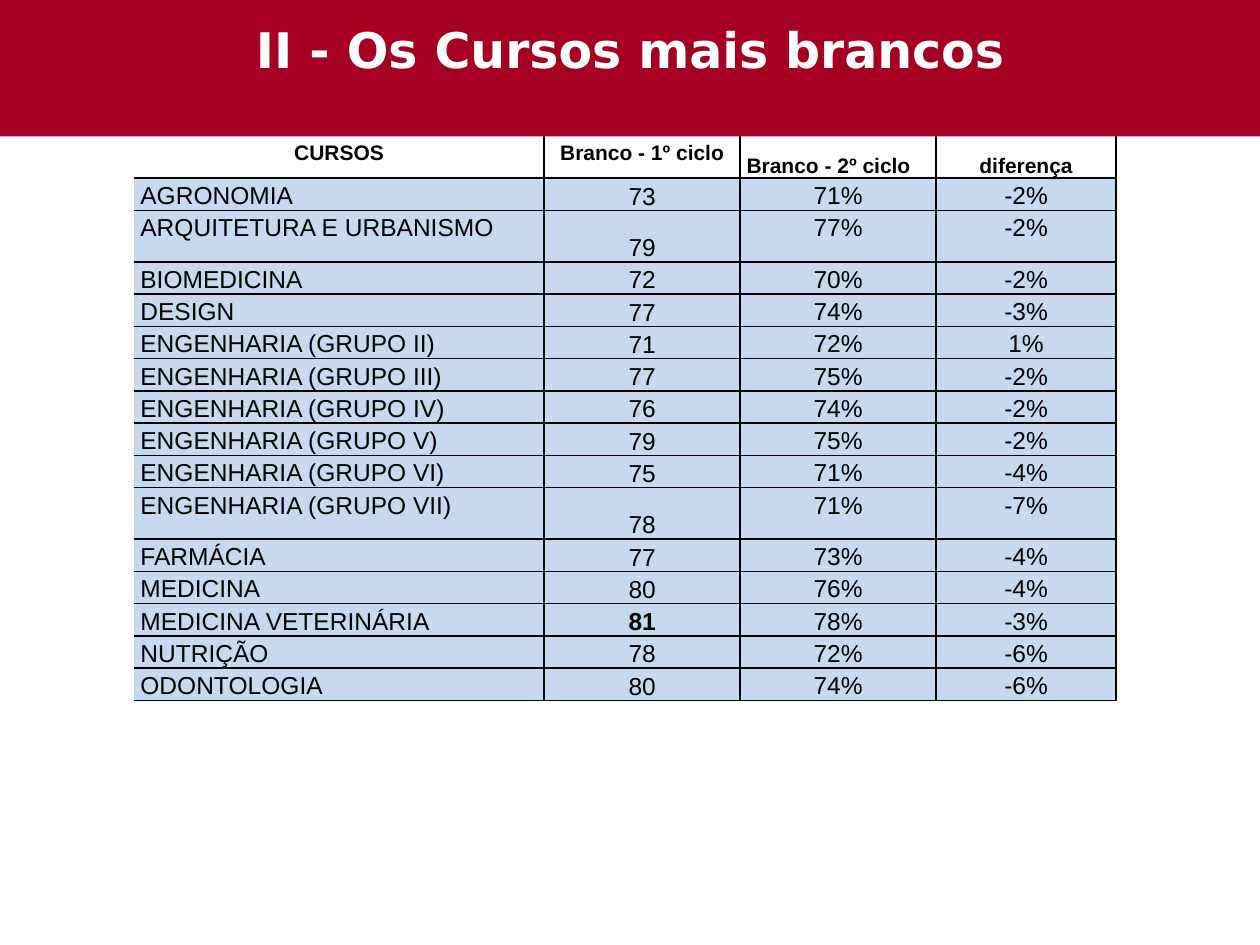
from dataclasses import dataclass

from lxml.etree import SubElement
from pptx import Presentation
from pptx.dml.color import RGBColor
from pptx.enum.text import MSO_ANCHOR, MSO_AUTO_SIZE, PP_ALIGN
from pptx.oxml.ns import qn
from pptx.slide import Slide
from pptx.util import Cm, Pt

RED = RGBColor(0xA5, 0x00, 0x21)
BLUE = RGBColor(0xC6, 0xD9, 0xF1)
WHITE = RGBColor(0xFF, 0xFF, 0xFF)
BLACK = RGBColor(0x00, 0x00, 0x00)

HEADERS = ("CURSOS", "Branco - 1º ciclo", "Branco - 2º ciclo", "diferença")
COURSES = (
    ("AGRONOMIA", "73", "71%", "-2%"),
    ("ARQUITETURA E URBANISMO", "79", "77%", "-2%"),
    ("BIOMEDICINA", "72", "70%", "-2%"),
    ("DESIGN", "77", "74%", "-3%"),
    ("ENGENHARIA (GRUPO II)", "71", "72%", "1%"),
    ("ENGENHARIA (GRUPO III)", "77", "75%", "-2%"),
    ("ENGENHARIA (GRUPO IV)", "76", "74%", "-2%"),
    ("ENGENHARIA (GRUPO V)", "79", "75%", "-2%"),
    ("ENGENHARIA (GRUPO VI)", "75", "71%", "-4%"),
    ("ENGENHARIA (GRUPO VII)", "78", "71%", "-7%"),
    ("FARMÁCIA", "77", "73%", "-4%"),
    ("MEDICINA", "80", "76%", "-4%"),
    ("MEDICINA VETERINÁRIA", "81", "78%", "-3%"),
    ("NUTRIÇÃO", "78", "72%", "-6%"),
    ("ODONTOLOGIA", "80", "74%", "-6%"),
)
COL_WIDTHS = (8.27, 3.95, 3.95, 3.63)
TALL_ROWS = ("ARQUITETURA E URBANISMO", "ENGENHARIA (GRUPO VII)")
HIGHEST = "81"


def write(tf, text, *, size, font="Arial", color=BLACK, bold=False,
          align=PP_ALIGN.CENTER, spacing=1.0):
    p = tf.paragraphs[0]
    p.alignment = align
    p.line_spacing = spacing
    r = p.add_run()
    r.text = text
    r.font.size = Pt(size)
    r.font.name = font
    r.font.bold = bold
    r.font.color.rgb = color


@dataclass
class SlideBuilder:
    """Hold the table style and the current slide, and add its elements."""

    s: Slide
    inset: float = 0.13
    border: float = 1
    spacing: float = 1.15

    def banner(self, text):
        sp = self.s.shapes.title
        sp.left, sp.top, sp.width, sp.height = Cm(0), Cm(0), Cm(25.4), Cm(2.75)
        geom = SubElement(sp.element.spPr, qn("a:prstGeom"), prst="roundRect")
        SubElement(SubElement(geom, qn("a:avLst")), qn("a:gd"),
                   name="adj", fmla="val 21700")
        sp.fill.solid()
        sp.fill.fore_color.rgb = RED
        sp.line.fill.background()
        tf = sp.text_frame
        tf.auto_size = MSO_AUTO_SIZE.NONE
        tf.word_wrap = True
        tf.vertical_anchor = MSO_ANCHOR.TOP
        tf.margin_top = Cm(0.39)
        write(tf, text, size=28, font="DejaVu Sans", color=WHITE, bold=True)
        self.s.shapes.element.append(sp.element)

    def borders(self, cell, first):
        tcPr = cell._tc.get_or_add_tcPr()
        for side in ("L", "R", "T", "B"):
            ln = SubElement(tcPr, qn(f"a:ln{side}"), w=str(Pt(self.border)))
            if first and side == "L":
                SubElement(ln, qn("a:noFill"))
            else:
                fill = SubElement(ln, qn("a:solidFill"))
                SubElement(fill, qn("a:srgbClr"), val=str(BLACK))

    def cell(self, cell, text, *, anchor, first, fill=None, **fmt):
        cell.margin_left = cell.margin_right = Cm(self.inset)
        cell.margin_top = cell.margin_bottom = 0
        cell.vertical_anchor = anchor
        self.borders(cell, first)
        if fill is None:
            cell.fill.background()
        else:
            cell.fill.solid()
            cell.fill.fore_color.rgb = fill
        write(cell.text_frame, text, spacing=self.spacing, **fmt)

    def table(self, headers, rows):
        heights = [1.07] + [1.04 if row[0] in TALL_ROWS else 0.65 for row in rows]
        tbl = self.s.shapes.add_table(
            len(heights), len(headers), Cm(2.7), Cm(2.52),
            Cm(sum(COL_WIDTHS)), Cm(sum(heights))).table
        tbl.first_row = tbl.horz_banding = False
        for col, width in zip(tbl.columns, COL_WIDTHS):
            col.width = Cm(width)
        for row, height in zip(tbl.rows, heights):
            row.height = Cm(height)
        for j, text in enumerate(headers):
            self.cell(tbl.cell(0, j), text, first=j == 0, size=12, bold=True,
                      anchor=MSO_ANCHOR.MIDDLE if j < 2 else MSO_ANCHOR.BOTTOM,
                      align=PP_ALIGN.LEFT if j == 2 else PP_ALIGN.CENTER)
        for i, row in enumerate(rows, 1):
            for j, text in enumerate(row):
                self.cell(tbl.cell(i, j), text, first=j == 0, fill=BLUE, size=14,
                          bold=text == HIGHEST,
                          anchor=MSO_ANCHOR.BOTTOM if j == 1 else MSO_ANCHOR.TOP,
                          align=PP_ALIGN.LEFT if j == 0 else PP_ALIGN.CENTER)


def main():
    prs = Presentation()
    prs.slide_width, prs.slide_height = Cm(25.4), Cm(19.05)
    builder = SlideBuilder(prs.slides.add_slide(prs.slide_layouts[5]))
    builder.table(HEADERS, COURSES)
    builder.banner("II - Os Cursos mais brancos")
    prs.save("out.pptx")


if __name__ == "__main__":
    main()
